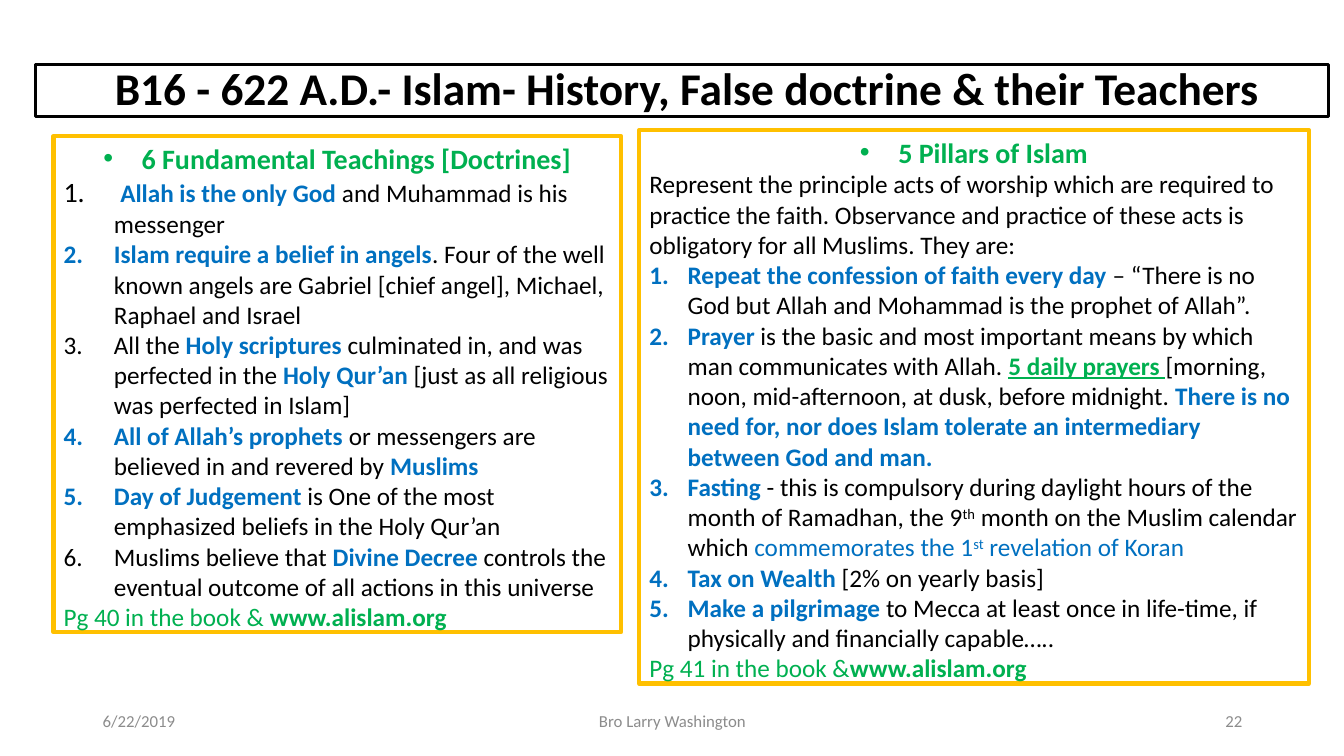
import pptx
import pptx.util
import pptx.dml.color
import pptx.enum.text
import pptx.oxml.ns
import lxml.etree

Inches = pptx.util.Inches
ALIGN = pptx.enum.text.PP_ALIGN
ANCHOR = pptx.enum.text.MSO_ANCHOR
FIT = pptx.enum.text.MSO_AUTO_SIZE

COLORS = {"black": "000000", "blue": "0070C0", "green": "00B050",
          "gold": "FFC000", "gray": "8C8C8C"}

# Run styles: colour, bold, underline, raised
STYLES = {
    "text": ("black", False, False, False),
    "text up": ("black", False, False, True),
    "key": ("blue", True, False, False),
    "blue": ("blue", False, False, False),
    "blue up": ("blue", False, False, True),
    "green": ("green", False, False, False),
    "head": ("green", True, False, False),
    "link": ("green", True, True, False),
    "title": ("black", True, False, False),
    "foot": ("gray", False, False, False),
}

TEACHINGS = [
    [(" ", "text", 20), ("Allah is the only God ", "key"),
     ("and Muhammad is his messenger", "text")],
    [("Islam require a belief in angels", "key"),
     (". Four of the well known angels are Gabriel [chief angel], Michael, "
      "Raphael and Israel", "text")],
    [("All the ", "text"), ("Holy scriptures ", "key"),
     ("culminated in, and was perfected in the ", "text"),
     ("Holy Qur’an ", "key"),
     ("[just as all religious was perfected in Islam]", "text")],
    [("All of Allah’s prophets ", "key"),
     ("or messengers are believed in and revered by ", "text"),
     ("Muslims", "key")],
    [("Day of Judgement ", "key"),
     ("is One of the most emphasized beliefs in the Holy Qur’an", "text")],
    [("Muslims believe that ", "text"), ("Divine Decree ", "key"),
     ("controls the eventual outcome of all actions in this universe", "text")],
]

PILLARS = [
    [("Repeat the confession of faith every day ", "key"),
     ("– “There is no God but Allah and Mohammad is the prophet of Allah”.",
      "text")],
    [("Prayer", "key"),
     (" is the basic and most important means by which man communicates "
      "with Allah. ", "text"),
     ("5 daily prayers ", "link"),
     ("[morning, noon, mid-afternoon, at dusk, before midnight. ", "text"),
     ("There is no need for, nor does Islam tolerate an intermediary between "
      "God and man.", "key")],
    [("Fasting ", "key"),
     ("- this is compulsory during daylight hours of the month of Ramadhan, "
      "the 9", "text"),
     ("th", "text up"), (" month on the Muslim calendar which ", "text"),
     ("commemorates the 1", "blue"), ("st", "blue up"),
     (" revelation of Koran", "blue")],
    [("Tax on Wealth ", "key"), ("[2% on yearly basis]", "text")],
    [("Make a pilgrimage ", "key"),
     ("to Mecca at least once in life-time, if physically and financially "
      "capable…..", "text")],
]

INTRO = [("Represent the principle acts of worship which are required to "
          "practice the faith. Observance and practice of these acts is "
          "obligatory for all Muslims. They are:", "text")]


class Deck:
    font = "Calibri"

    def __init__(self):
        self.prs = pptx.Presentation()
        self.prs.slide_width = Inches(13.33)
        self.prs.slide_height = Inches(7.5)
        self.slide = self.prs.slides.add_slide(self.prs.slide_layouts[3])

    def color(self, name):
        return pptx.dml.color.RGBColor.from_string(COLORS[name])

    def place(self, shape, box):
        shape.left, shape.top, shape.width, shape.height = map(Inches, box)

    def frame(self, shape, color, width):
        shape.line.color.rgb = self.color(color)
        shape.line.width = pptx.util.Pt(width)

    def fill(self, para, runs, size):
        """Add runs given as (text, style) or (text, style, own size)."""
        for text, style, *own in runs:
            color, bold, under, raised = STYLES[style]
            run = para.add_run()
            run.text = text
            run.font.name = self.font
            run.font.size = pptx.util.Pt(own[0] if own else size)
            run.font.bold = bold
            run.font.underline = under
            run.font.color.rgb = self.color(color)
            if raised:
                run._r.get_or_add_rPr().set("baseline", "30000")

    def mark(self, para, kind, indent):
        """Set the bullet: "dot", "number" or None."""
        props = para._p.get_or_add_pPr()
        props.set("marL", str(Inches(indent)))
        props.set("indent", str(-Inches(indent)))

        def add(tag, **attrs):
            name = pptx.oxml.ns.qn("a:" + tag)
            lxml.etree.SubElement(props, name, **attrs)

        if kind == "dot":
            add("buFont", typeface="Arial")
            add("buChar", char="•")
        elif kind == "number":
            add("buFont", typeface="+mj-lt")
            add("buAutoNum", type="arabicPeriod")
        else:
            add("buNone")

    def title(self, text, box):
        shape = self.slide.shapes.title
        self.place(shape, box)
        self.frame(shape, "black", 2.25)
        frame = shape.text_frame
        frame.auto_size = FIT.NONE
        frame.vertical_anchor = ANCHOR.MIDDLE
        para = frame.paragraphs[0]
        para.alignment = ALIGN.CENTER
        para.line_spacing = 0.9
        self.fill(para, [(text, "title")], 32.4)

    def panel(self, index, box, head, intro, items, indent, source):
        shape = self.slide.placeholders[index]
        self.place(shape, box)
        self.frame(shape, "gold", 3)
        frame = shape.text_frame
        frame.word_wrap = True
        frame.auto_size = FIT.SHAPE_TO_FIT_TEXT
        rows = [([(head, "head")], "dot", 0.38, 20)]
        rows += [(runs, None, 0, 18) for runs in intro]
        rows += [(runs, "number", indent, 18) for runs in items]
        rows.append(([(source, "green"), ("www.alislam.org", "head")],
                     None, 0, 18))
        for i, (runs, kind, gap, size) in enumerate(rows):
            para = frame.add_paragraph() if i else frame.paragraphs[0]
            para.alignment = ALIGN.CENTER if kind == "dot" else ALIGN.LEFT
            para.space_before = pptx.util.Pt(0)
            self.mark(para, kind, gap)
            self.fill(para, runs, size)

    def footer(self, text, left, width, align):
        box = self.slide.shapes.add_textbox(
            *map(Inches, (left, 6.95, width, 0.4)))
        frame = box.text_frame
        frame.word_wrap = True
        frame.vertical_anchor = ANCHOR.MIDDLE
        para = frame.paragraphs[0]
        para.alignment = align
        self.fill(para, [(text, "foot")], 12)


def main():
    deck = Deck()
    deck.title(" B16 - 622 A.D.- Islam- History, False doctrine & "
               "their Teachers", (0.35, 0.64, 12.83, 0.52))
    deck.panel(1, (0.53, 1.35, 5.63, 5.02),
               "6 Fundamental Teachings [Doctrines]", [], TEACHINGS, 0.5,
               "Pg 40 in the book & ")
    deck.panel(2, (6.34, 1.29, 6.64, 5.59), "5 Pillars of Islam", [INTRO],
               PILLARS, 0.38, "Pg 41 in the book &")
    deck.footer("6/22/2019", 0.92, 3, ALIGN.LEFT)
    deck.footer("Bro Larry Washington", 4.42, 4.5, ALIGN.CENTER)
    deck.footer("22", 9.42, 3, ALIGN.RIGHT)
    deck.prs.save("out.pptx")


if __name__ == "__main__":
    main()
